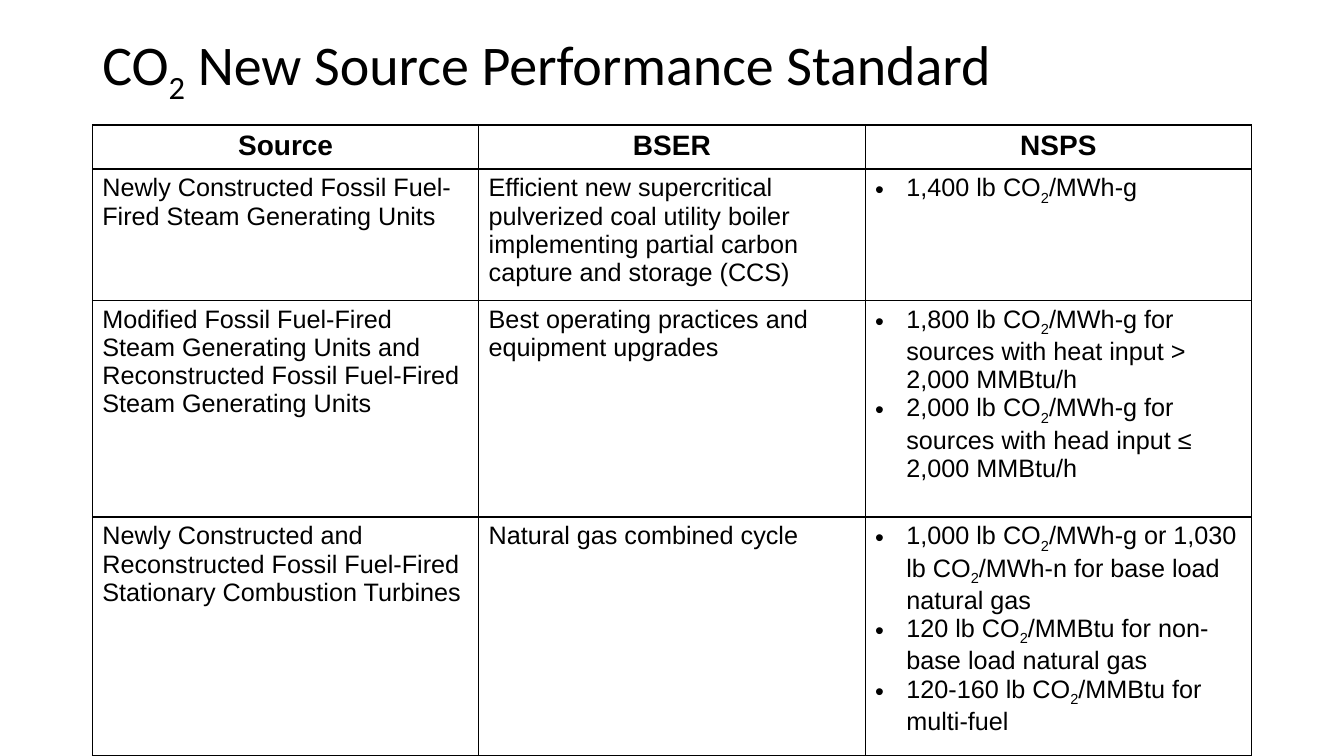
"""Build a slide with the table of CO2 performance standards for new sources."""
from lxml import etree
from pptx import Presentation
from pptx.dml.color import RGBColor
from pptx.enum.text import MSO_ANCHOR, PP_ALIGN
from pptx.oxml.ns import qn
from pptx.util import Cm, Pt

MIDDLE = MSO_ANCHOR.MIDDLE
CENTER = PP_ALIGN.CENTER
LEFT = PP_ALIGN.LEFT
BLACK = RGBColor(0x00, 0x00, 0x00)

MARGIN_LEFT = Cm(2.33)
CONTENT_WIDTH = Cm(29.21)
BULLET_INDENT = Cm(0.79)
ROW_HEIGHTS = [Cm(1.05), Cm(3.12), Cm(5.46), Cm(5.68)]
INSETS = {"margin_left": Cm(0.25), "margin_right": Cm(0.25),
          "margin_top": Cm(0.13), "margin_bottom": Cm(0.13)}

TITLE_FORMAT = {"name": "Calibri", "size": Pt(40), "bold": False}
HEADER_FORMAT = {"name": "Arial", "size": Pt(20), "bold": True}
BODY_FORMAT = {"name": "Arial", "size": Pt(18), "bold": False}

TITLE = "CO_2_ New Source Performance Standard"
HEADERS = ["Source", "BSER", "NSPS"]
STANDARDS = [
    ("Newly Constructed Fossil Fuel-Fired Steam Generating Units",
     "Efficient new supercritical pulverized coal utility boiler "
     "implementing partial carbon capture and storage (CCS)",
     ["1,400 lb CO_2_/MWh-g"]),
    ("Modified Fossil Fuel-Fired Steam Generating Units and "
     "Reconstructed Fossil Fuel-Fired Steam Generating Units",
     "Best operating practices and equipment upgrades",
     ["1,800 lb CO_2_/MWh-g for sources with heat input > 2,000 MMBtu/h",
      "2,000 lb CO_2_/MWh-g for sources with head input ≤ 2,000 MMBtu/h"]),
    ("Newly Constructed and Reconstructed Fossil Fuel-Fired "
     "Stationary Combustion Turbines",
     "Natural gas combined cycle",
     ["1,000 lb CO_2_/MWh-g or 1,030 lb CO_2_/MWh-n for base load natural gas",
      "120 lb CO_2_/MMBtu for non-base load natural gas",
      "120-160 lb CO_2_/MMBtu for multi-fuel"]),
]


def apply_format(target, values):
    """Set every attribute named in the format values."""
    for attribute, value in values.items():
        setattr(target, attribute, value)


def write_text(paragraph, text, font_values):
    """Write the text, lowering the parts enclosed in underscores."""
    for position, part in enumerate(text.split("_")):
        run = paragraph.add_run()
        run.text = part
        apply_format(run.font, font_values)
        run.font.color.rgb = BLACK
        if position % 2:
            run.font._element.set("baseline", "-25000")


def add_bullet(paragraph):
    """Give the paragraph a hanging round bullet."""
    properties = paragraph._p.get_or_add_pPr()
    properties.set("marL", str(BULLET_INDENT))
    properties.set("indent", str(-BULLET_INDENT))
    colour = etree.SubElement(properties, qn("a:buClr"))
    etree.SubElement(colour, qn("a:srgbClr"), val=str(BLACK))
    etree.SubElement(properties, qn("a:buFont"), typeface="Arial")
    etree.SubElement(properties, qn("a:buChar"), char="•")


def add_borders(cell):
    """Draw a thin black line on all four sides of the cell."""
    properties = cell._tc.get_or_add_tcPr()
    for side in ("a:lnL", "a:lnR", "a:lnT", "a:lnB"):
        line = etree.SubElement(properties, qn(side), w=str(Pt(1)))
        fill = etree.SubElement(line, qn("a:solidFill"))
        etree.SubElement(fill, qn("a:srgbClr"), val=str(BLACK))


def fill_cell(cell, content, font_values, alignment):
    """Write one text or a list of bulleted texts into a bordered cell."""
    add_borders(cell)
    cell.fill.background()
    apply_format(cell, INSETS)
    bulleted = isinstance(content, list)
    frame = cell.text_frame
    for number, text in enumerate(content if bulleted else [content]):
        paragraph = frame.add_paragraph() if number else frame.paragraphs[0]
        if bulleted:
            add_bullet(paragraph)
        paragraph.alignment = alignment
        write_text(paragraph, text, font_values)


def add_title(slide):
    """Add the slide heading."""
    heading = slide.shapes.add_textbox(MARGIN_LEFT, Cm(-0.2), CONTENT_WIDTH, Cm(3.68))
    frame = heading.text_frame
    apply_format(frame, {"word_wrap": True, "vertical_anchor": MIDDLE, **INSETS})
    frame.paragraphs[0].line_spacing = 0.9
    write_text(frame.paragraphs[0], TITLE, TITLE_FORMAT)


def add_standards_table(slide):
    """Add the table of sources, best systems and standards."""
    standards = slide.shapes.add_table(
        len(ROW_HEIGHTS), len(HEADERS), MARGIN_LEFT, Cm(3.15),
        CONTENT_WIDTH, sum(ROW_HEIGHTS)).table
    apply_format(standards, {"first_row": False, "horz_banding": False})
    for row, height in zip(standards.rows, ROW_HEIGHTS):
        row.height = height
    for row_number, contents in enumerate([HEADERS, *STANDARDS]):
        font_values, alignment = (BODY_FORMAT, LEFT) if row_number else (HEADER_FORMAT, CENTER)
        for column_number, content in enumerate(contents):
            fill_cell(standards.cell(row_number, column_number),
                      content, font_values, alignment)


def main():
    """Build and save the slide."""
    presentation = Presentation()
    apply_format(presentation, {"slide_width": Cm(33.87), "slide_height": Cm(19.05)})
    slide = presentation.slides.add_slide(presentation.slide_layouts[6])
    add_title(slide)
    add_standards_table(slide)
    presentation.save("out.pptx")


if __name__ == "__main__":
    main()
